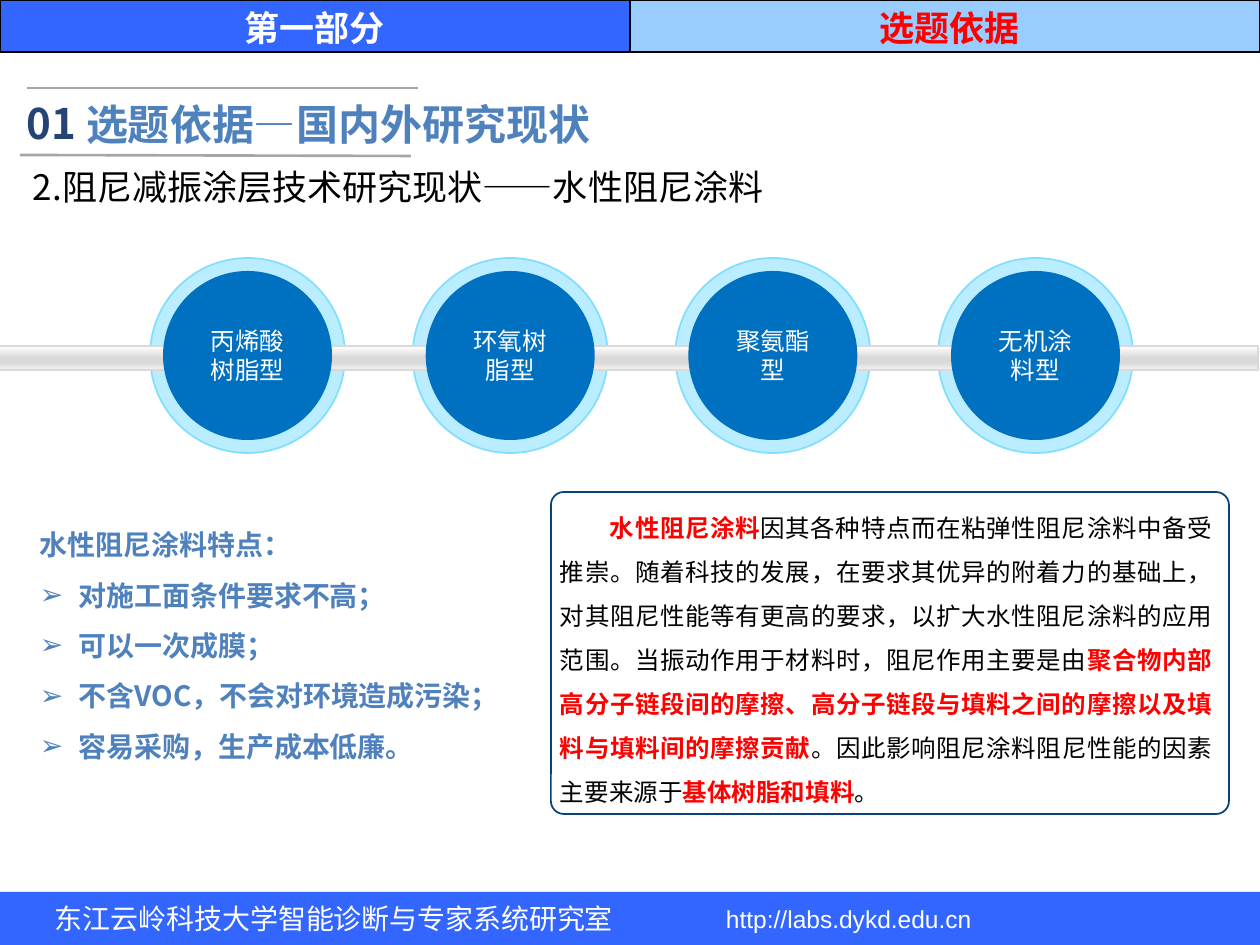
import pptx
import pptx.util
import pptx.dml.color
import pptx.enum.shapes
import pptx.enum.text
import pptx.oxml
import pptx.oxml.ns

PX = 914400 / 126
SANS = "Noto Sans CJK SC"
BLUE, SKY, RED = "3366FF", "99CCFF", "FF0000"
STEEL, GREY, WHITE, BLACK = "4F81BD", "A6A6A6", "FFFFFF", "000000"
KIND = pptx.enum.shapes.MSO_SHAPE
ALIGN = pptx.enum.text.PP_ALIGN
ANCHOR = pptx.enum.text.MSO_ANCHOR


def px(num):
    return pptx.util.Emu(round(num * PX))


def color(code):
    return pptx.dml.color.RGBColor.from_string(code)


def node(tag, attrs=""):
    """Make an empty drawing element such as <a:buChar .../>."""
    space = pptx.oxml.ns.nsdecls("a")
    return pptx.oxml.parse_xml(f"<a:{tag} {space} {attrs}/>")


def shape(slide, kind, box, fill=None, line=None, width=1):
    item = slide.shapes.add_shape(kind, *map(px, box))
    item.shadow.inherit = False
    if fill:
        item.fill.solid()
        item.fill.fore_color.rgb = color(fill)
    else:
        item.fill.background()
    if line:
        item.line.color.rgb = color(line)
        item.line.width = pptx.util.Pt(width)
    else:
        item.line.fill.background()
    return item


def style(para, size, tint, bold=False, face=SANS, align=ALIGN.LEFT):
    para.alignment = align
    for run in para.runs:
        font = run.font
        font.size = pptx.util.Pt(size)
        font.bold = bold
        font.name = face
        font.color.rgb = color(tint)
        run._r.get_or_add_rPr().append(node("ea", f'typeface="{SANS}"'))


def frame(slide, box, side=13, top=6):
    """Add a wrapping text box and return its text frame."""
    text = slide.shapes.add_textbox(*map(px, box)).text_frame
    text.word_wrap = True
    text.margin_left = text.margin_right = px(side)
    text.margin_top = text.margin_bottom = px(top)
    return text


def label(slide, box, words, size, tint, **look):
    text = frame(slide, box)
    text.text = words
    style(text.paragraphs[0], size, tint, **look)
    return text


def rule(slide, start, end):
    line = slide.shapes.add_connector(
        pptx.enum.shapes.MSO_CONNECTOR.STRAIGHT, *map(px, start + end))
    line.line.color.rgb = color(GREY)
    line.line.width = pptx.util.Pt(1.5)
    line._element.spPr.append(node("effectLst"))


def header(slide, box):
    left, top, width, height = box
    half = width // 2
    parts = [("第一部分", BLUE, WHITE, 0), ("选题依据", SKY, RED, 10)]
    for col, (words, fill, tint, shift) in enumerate(parts):
        x = left + col * half
        shape(slide, KIND.RECTANGLE, (x, top, half, height), fill, BLACK, 0.75)
        label(slide, (x + shift, top + 1, half - shift, height + 9), words, 20,
              tint, bold=True, face="Arial", align=ALIGN.CENTER)


def footer(slide, box):
    left, top, width, height = box
    shape(slide, KIND.RECTANGLE, box, BLUE)
    parts = [(42, 640, "东江云岭科技大学智能诊断与专家系统研究室", 16, SANS),
             (713, 320, "http://labs.dykd.edu.cn", 14, "Arial")]
    for x, wide, words, size, face in parts:
        text = label(slide, (left + x, top, wide, height), words, size,
                     WHITE, face=face)
        text.vertical_anchor = ANCHOR.MIDDLE


def heading(slide, box):
    left, top, width, height = box
    label(slide, (left - 6, top + 4, 110, 63), "01", 24, "254375", bold=True)
    label(slide, (left + 53, top + 5, 673, 63), "选题依据—国内外研究现状", 24,
          STEEL, bold=True)
    rule(slide, (left + 7, top), (left + 398, top))
    rule(slide, (left, top + 67), (left + 391, top + 68))
    label(slide, (left, top + 71, width, 55),
          "2.阻尼减振涂层技术研究现状——水性阻尼涂料", 20, BLACK)


def bar(slide, box):
    """Draw the shaded rod that runs behind the discs."""
    rod = shape(slide, KIND.RECTANGLE, box, WHITE, "D9D9D9")
    rod.fill.gradient()
    rod.fill.gradient_angle = 270
    stops = rod._element.spPr.find(".//" + pptx.oxml.ns.qn("a:gsLst"))
    for old in list(stops):
        stops.remove(old)
    for pos, code in [(0, WHITE), (51, "D9D9D9"), (70, "D9D9D9"),
                      (100, "F2F2F2")]:
        stop = node("gs", f'pos="{pos * 1000}"')
        stop.append(node("srgbClr", f'val="{code}"'))
        stops.append(stop)


def discs(slide, box):
    left, top, width, height = box
    names = ["丙烯酸树脂型", "环氧树脂型", "聚氨酯型", "无机涂料型"]
    ring, edge = height, 13
    step = (width - ring) / (len(names) - 1)
    spots = [left + step * num for num in range(len(names))]
    for x in spots:
        shape(slide, KIND.OVAL, (x, top, ring, ring), "B9EDFF", "82DEFE")
    bar(slide, (-2, top + 88, 1260, 24))
    core = ring - 2 * edge
    for x, name in zip(spots, names):
        disc = shape(slide, KIND.OVAL, (x + edge, top + edge, core, core),
                     "0070C0")
        text = disc.text_frame
        text.text = name
        text.word_wrap = True
        text.vertical_anchor = ANCHOR.MIDDLE
        style(text.paragraphs[0], 14, WHITE, align=ALIGN.CENTER)


def traits(slide, box):
    lines = ["水性阻尼涂料特点：", "对施工面条件要求不高；", "可以一次成膜；",
             "不含VOC，不会对环境造成污染；", "容易采购，生产成本低廉。"]
    text = frame(slide, box, top=0)
    text.text = "\n".join(lines)
    for num, para in enumerate(text.paragraphs):
        style(para, 16, STEEL, bold=True, align=ALIGN.JUSTIFY)
        para.line_spacing = 1.5
        if num:
            props = para._p.get_or_add_pPr()
            props.set("marL", str(px(39)))
            props.set("indent", str(-px(39)))
            props.append(node("buFont", 'typeface="Arial"'))
            props.append(node("buChar", 'char="➢"'))


def summary(slide, box):
    left, top, width, height = box
    card = shape(slide, KIND.ROUNDED_RECTANGLE, box, line="074279")
    card.adjustments[0] = 0.04
    parts = [
        "水性阻尼涂料",
        "因其各种特点而在粘弹性阻尼涂料中备受推崇。随着科技的发展，"
        "在要求其优异的附着力的基础上，对其阻尼性能等有更高的要求，"
        "以扩大水性阻尼涂料的应用范围。当振动作用于材料时，阻尼作用主要是由",
        "聚合物内部高分子链段间的摩擦、高分子链段与填料之间的摩擦"
        "以及填料与填料间的摩擦贡献",
        "。因此影响阻尼涂料阻尼性能的因素主要来源于",
        "基体树脂和填料",
        "。"]
    para = frame(slide, (left - 4, top, width, height)).paragraphs[0]
    for words in parts:
        para.add_run().text = words
    style(para, 14, BLACK, align=ALIGN.JUSTIFY)
    for run in para.runs[::2]:
        run.font.bold = True
        run.font.color.rgb = color(RED)
    para.line_spacing = 1.5
    para._p.get_or_add_pPr().set("indent", str(px(50)))


def main():
    deck = pptx.Presentation()
    deck.slide_width, deck.slide_height = px(1260), px(945)
    slide = deck.slides.add_slide(deck.slide_layouts[6])
    header(slide, (0, 0, 1260, 52))
    footer(slide, (0, 892, 1260, 53))
    heading(slide, (20, 88, 769, 126))
    discs(slide, (150, 258, 983, 195))
    traits(slide, (27, 511, 491, 254))
    summary(slide, (551, 492, 678, 322))
    deck.save("out.pptx")


if __name__ == "__main__":
    main()
